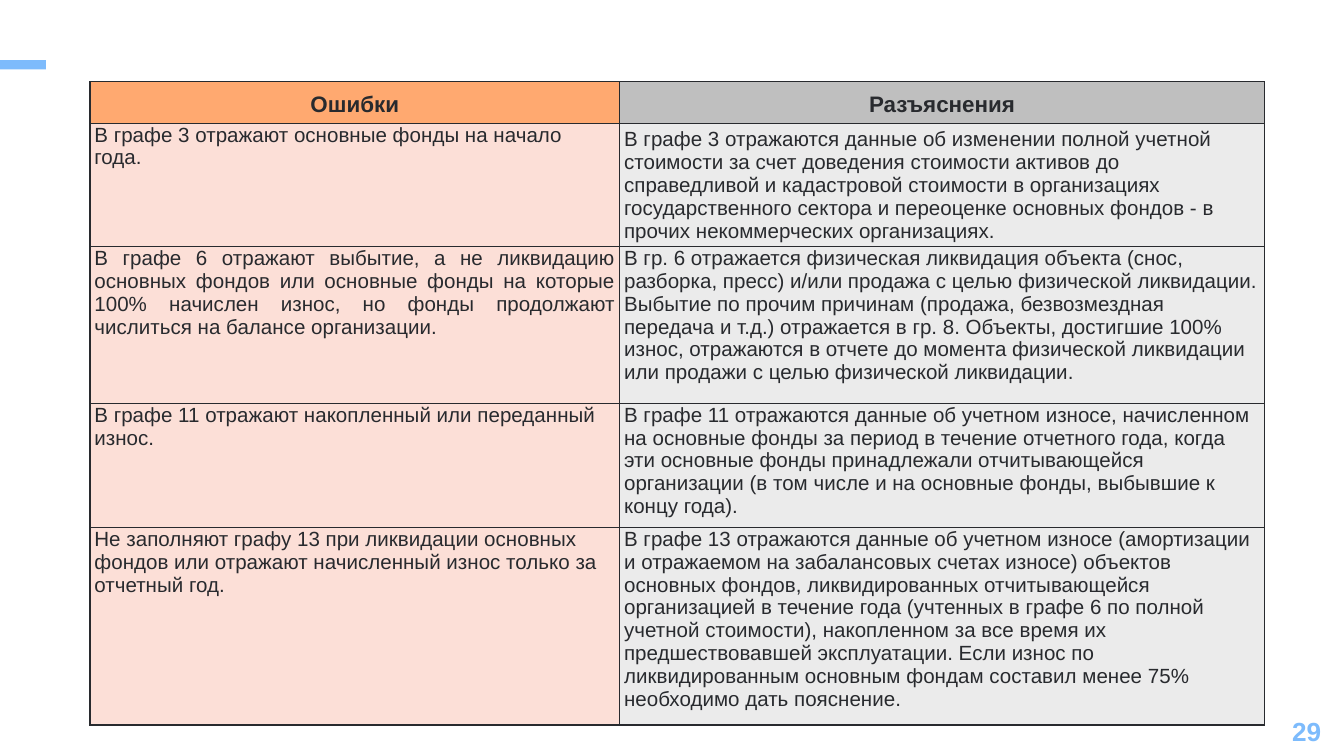
from lxml import etree
from pptx import Presentation
from pptx.dml.color import RGBColor
from pptx.enum import shapes, text
from pptx.oxml import ns
from pptx.util import Pt

FONT = "Arial"
INK = "282A2E"
ACCENT = "7DBBFC"
HEADER_FILLS = ("FFA970", "BFBFBF")
BODY_FILLS = ("FCDFD7", "EBEBEB")
COLUMN_WIDTHS = (283.8, 345.5)
ROW_HEIGHTS = (22.5, 66, 84, 66.5, 105.5)
HEADINGS = ("Ошибки", "Разъяснения")
ENTRIES = (
    (
        "В графе 3 отражают основные фонды на начало года.",
        "В графе 3 отражаются данные об изменении полной учетной стоимости за счет "
        "доведения стоимости активов до справедливой и кадастровой стоимости в "
        "организациях государственного сектора и переоценке основных фондов - в "
        "прочих некоммерческих организациях.",
    ),
    (
        "В графе 6 отражают выбытие, а не ликвидацию основных фондов или основные "
        "фонды на которые 100% начислен износ, но фонды продолжают числиться на "
        "балансе организации.",
        "В гр. 6 отражается физическая ликвидация объекта (снос, разборка, пресс) "
        "и/или продажа с целью физической ликвидации.\n"
        "Выбытие по прочим причинам (продажа, безвозмездная передача и т.д.) "
        "отражается в гр. 8. Объекты, достигшие 100% износ, отражаются в отчете до "
        "момента физической ликвидации или продажи с целью физической ликвидации.",
    ),
    (
        "В графе 11 отражают накопленный или переданный износ.",
        "В графе 11 отражаются данные об учетном износе, начисленном на основные "
        "фонды за период в течение отчетного года, когда эти основные фонды "
        "принадлежали отчитывающейся организации (в том числе и на основные фонды, "
        "выбывшие к концу года).",
    ),
    (
        "Не заполняют графу 13 при ликвидации основных фондов или отражают "
        "начисленный износ только за отчетный год.",
        "В графе 13 отражаются данные об учетном износе (амортизации и отражаемом на "
        "забалансовых счетах износе) объектов основных фондов, ликвидированных "
        "отчитывающейся организацией в течение года (учтенных в графе 6 по полной "
        "учетной стоимости), накопленном за все время их предшествовавшей "
        "эксплуатации. Если износ по ликвидированным основным фондам составил менее "
        "75% необходимо дать пояснение.",
    ),
)


def color(value):
    """Turn a hex string into a colour."""
    return RGBColor.from_string(value)


def fill_solid(target, value):
    """Fill a shape or cell with one colour."""
    target.fill.solid()
    target.fill.fore_color.rgb = color(value)


def format_text(frame, size, value, bold, alignment, spacing=1):
    """Format every paragraph and run of a text frame."""
    for paragraph in frame.paragraphs:
        paragraph.alignment = alignment
        paragraph.line_spacing = spacing
        for run in paragraph.runs:
            run.font.name = FONT
            run.font.size = Pt(size)
            run.font.bold = bold
            run.font.color.rgb = color(value)


def add_borders(cell, value, width):
    """Draw a line on all four sides of a cell."""
    properties = cell._tc.get_or_add_tcPr()
    for side in ("lnL", "lnR", "lnT", "lnB"):
        line = etree.SubElement(properties, ns.qn(f"a:{side}"), w=str(Pt(width)))
        solid = etree.SubElement(line, ns.qn("a:solidFill"))
        etree.SubElement(solid, ns.qn("a:srgbClr"), val=value)


def add_cell(cell, content, fill, anchor, size, bold, alignment, spacing):
    """Write and format one table cell."""
    cell.margin_left = cell.margin_right = Pt(2.4)
    cell.margin_top = cell.margin_bottom = 0
    cell.vertical_anchor = anchor
    add_borders(cell, INK, 0.75)
    fill_solid(cell, fill)
    cell.text_frame.text = content
    format_text(cell.text_frame, size, INK, bold, alignment, spacing)


def add_errors_table(slide, left, top):
    """Place the table of errors and explanations."""
    align, anchors = text.PP_ALIGN, text.MSO_ANCHOR
    table = slide.shapes.add_table(
        len(ROW_HEIGHTS), len(COLUMN_WIDTHS), Pt(left), Pt(top),
        Pt(sum(COLUMN_WIDTHS)), Pt(sum(ROW_HEIGHTS)),
    ).table
    table.horz_banding = False
    for column, width in zip(table.columns, COLUMN_WIDTHS):
        column.width = Pt(width)
    for row, height in zip(table.rows, ROW_HEIGHTS):
        row.height = Pt(height)
    for column, heading in enumerate(HEADINGS):
        add_cell(table.cell(0, column), heading, HEADER_FILLS[column],
                 anchors.MIDDLE, 12, True, align.CENTER, 1.15)
    for row, entry in enumerate(ENTRIES, start=1):
        for column, content in enumerate(entry):
            anchor = anchors.MIDDLE if (row, column) == (1, 1) else anchors.TOP
            alignment = align.JUSTIFY if (row, column) == (2, 0) else align.LEFT
            add_cell(table.cell(row, column), content, BODY_FILLS[column],
                     anchor, 11, False, alignment, 1)


def add_accent_bar(slide, left, top, width, height):
    """Place the bar at the slide's left edge."""
    bar = slide.shapes.add_shape(
        shapes.MSO_SHAPE.RECTANGLE, Pt(left), Pt(top), Pt(width), Pt(height))
    bar.shadow.inherit = False
    fill_solid(bar, ACCENT)
    bar.line.fill.background()


def add_page_number(slide, number, left, top, width, height):
    """Place the page number in its box."""
    box = slide.shapes.add_textbox(Pt(left), Pt(top), Pt(width), Pt(height))
    frame = box.text_frame
    frame.word_wrap = True
    frame.vertical_anchor = text.MSO_ANCHOR.MIDDLE
    frame.margin_left = frame.margin_right = Pt(5)
    frame.margin_top = frame.margin_bottom = Pt(3)
    frame.text = str(number)
    format_text(frame, 14, ACCENT, True, text.PP_ALIGN.RIGHT)


def main():
    """Build and save the slide."""
    presentation = Presentation()
    presentation.slide_width = Pt(720)
    presentation.slide_height = Pt(405)
    slide = presentation.slides.add_slide(presentation.slide_layouts[6])
    add_accent_bar(slide, 0, 32.2, 24.6, 5)
    add_page_number(slide, 29, 550.8, 380.9, 162, 21.6)
    add_errors_table(slide, 48.2, 43.7)
    presentation.save("out.pptx")


if __name__ == "__main__":
    main()
